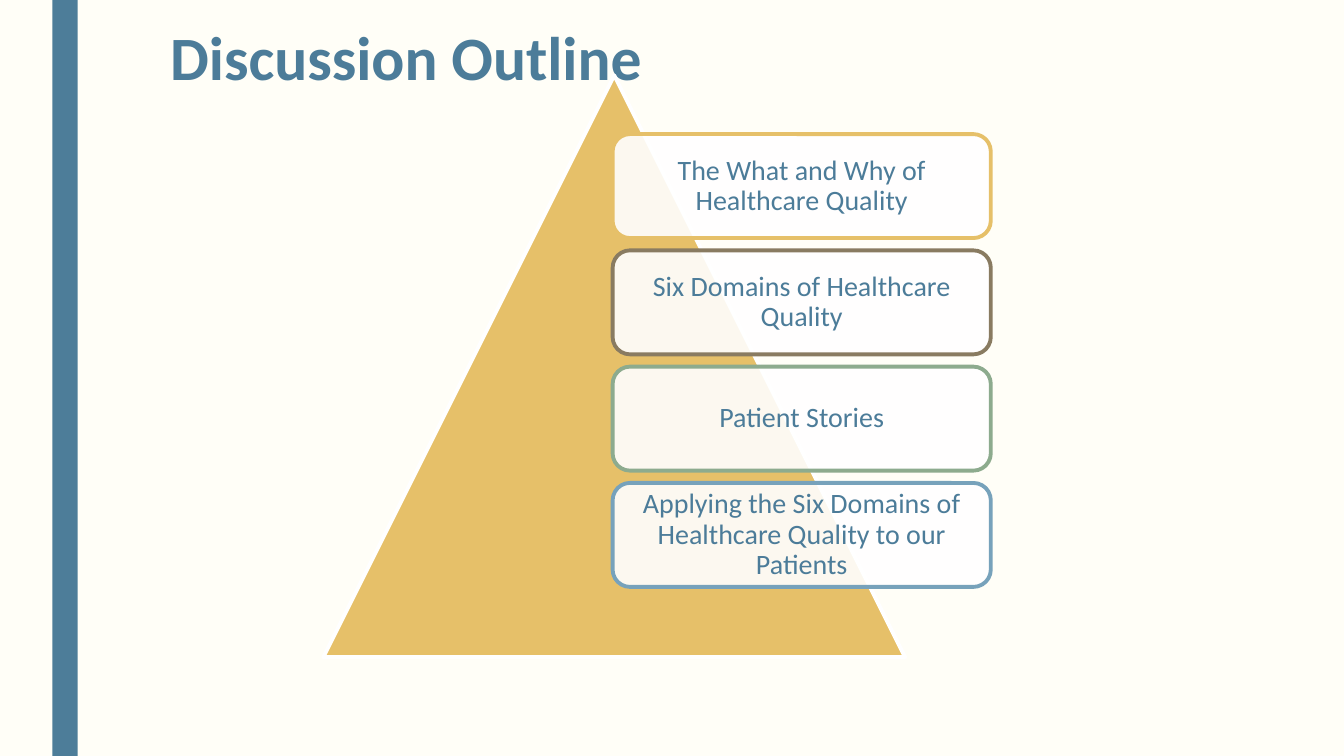
from dataclasses import dataclass

import pptx
import pptx.dml.color
import pptx.enum.shapes
import pptx.enum.text
import pptx.oxml.ns
import pptx.util
from lxml import etree

Cm = pptx.util.Cm
Pt = pptx.util.Pt
MSO_SHAPE = pptx.enum.shapes.MSO_SHAPE

COLORS = {
    "background": "FFFEF7",
    "sidebar": "4D7D99",
    "text": "4C7C99",
    "white": "FFFFFF",
    "gold": "E6C069",
    "brown": "897B61",
    "green": "8DAB8E",
    "blue": "77A2BB",
}
FONT = "Calibri"
OUTLINE_WIDTH = 2.75
TOPIC_LEFT, TOPIC_TOP = 15.44, 3.38
TOPIC_WIDTH, TOPIC_HEIGHT = 9.53, 2.62
TOPIC_PITCH = 2.93
TOPIC_INSET = 0.33
TOPIC_OPACITY = 90


@dataclass(frozen=True)
class Topic:
    label: str
    outline: str


TOPICS = [
    Topic("The What and Why of Healthcare Quality", "gold"),
    Topic("Six Domains of Healthcare Quality", "brown"),
    Topic("Patient Stories", "green"),
    Topic("Applying the Six Domains of Healthcare Quality to our Patients", "blue"),
]


def rgb(color: str) -> pptx.dml.color.RGBColor:
    return pptx.dml.color.RGBColor.from_string(COLORS[color])


def add_block(slide, preset, left: float, top: float, width: float,
              height: float, fill: str, outline: str | None = None):
    block = slide.shapes.add_shape(preset, Cm(left), Cm(top), Cm(width), Cm(height))
    block.shadow.inherit = False
    block.fill.solid()
    block.fill.fore_color.rgb = rgb(fill)
    if outline is None:
        block.line.fill.background()
    else:
        block.line.color.rgb = rgb(outline)
        block.line.width = Pt(OUTLINE_WIDTH)
    return block


def set_opacity(block, percent: int) -> None:
    qn = pptx.oxml.ns.qn
    fill_color = block.fill._xPr.find(qn("a:solidFill")).find(qn("a:srgbClr"))
    etree.SubElement(fill_color, qn("a:alpha"), val=str(percent * 1000))


def add_run(paragraph, text: str, size: int, bold: bool = False) -> None:
    run = paragraph.add_run()
    run.text = text
    run.font.name = FONT
    run.font.size = Pt(size)
    run.font.bold = bold
    run.font.color.rgb = rgb("text")


def add_title(slide, text: str) -> None:
    title = slide.shapes.add_textbox(Cm(4.04), Cm(0.36), Cm(15.93), Cm(2.13))
    title.text_frame.word_wrap = True
    add_run(title.text_frame.paragraphs[0], text, 44, bold=True)


def add_topic(slide, topic: Topic, top: float) -> None:
    card = add_block(slide, MSO_SHAPE.ROUNDED_RECTANGLE, TOPIC_LEFT, top,
                     TOPIC_WIDTH, TOPIC_HEIGHT, "white", topic.outline)
    set_opacity(card, TOPIC_OPACITY)
    frame = card.text_frame
    frame.word_wrap = True
    frame.vertical_anchor = pptx.enum.text.MSO_ANCHOR.MIDDLE
    frame.margin_left = frame.margin_right = Cm(TOPIC_INSET)
    frame.margin_top = frame.margin_bottom = Cm(TOPIC_INSET)
    paragraph = frame.paragraphs[0]
    paragraph.alignment = pptx.enum.text.PP_ALIGN.CENTER
    paragraph.line_spacing = 0.9
    add_run(paragraph, topic.label, 20)


def main() -> None:
    deck = pptx.Presentation()
    deck.slide_width, deck.slide_height = Cm(33.87), Cm(19.05)
    slide = deck.slides.add_slide(deck.slide_layouts[6])

    # Background and sidebar
    slide.background.fill.solid()
    slide.background.fill.fore_color.rgb = rgb("background")
    add_block(slide, MSO_SHAPE.RECTANGLE, 1.32, 0, 0.64, 19.05, "sidebar")

    # Title
    add_title(slide, "Discussion Outline")

    # Pyramid with its topics
    add_block(slide, MSO_SHAPE.ISOSCELES_TRIANGLE, 8.15, 1.9, 14.66, 14.66,
              "gold", "white")
    for index, topic in enumerate(TOPICS):
        add_topic(slide, topic, TOPIC_TOP + index * TOPIC_PITCH)

    deck.save("out.pptx")


if __name__ == "__main__":
    main()
